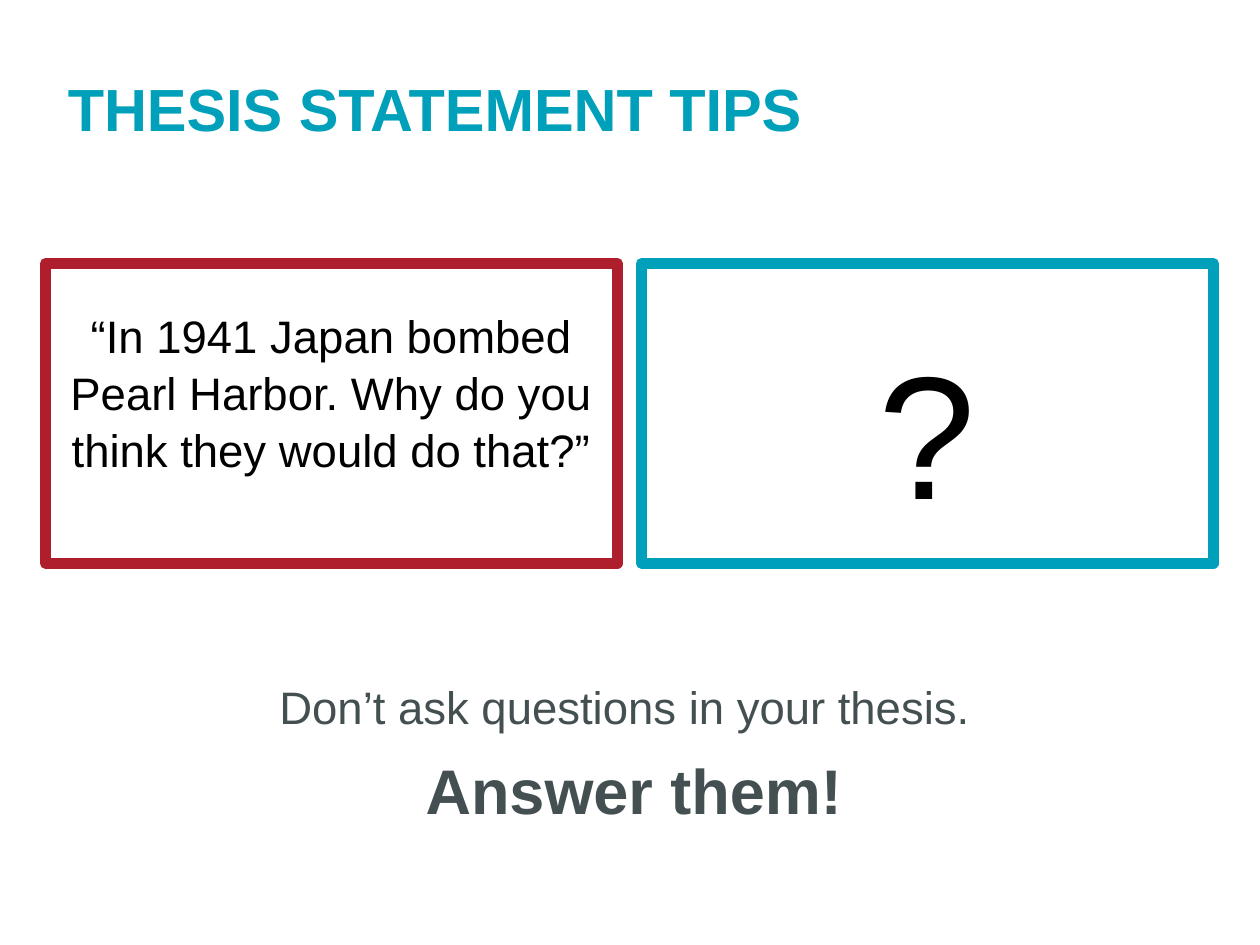
from lxml.etree import SubElement
from pptx import Presentation
from pptx.dml.color import RGBColor
from pptx.enum.shapes import MSO_SHAPE as Shape
from pptx.enum.text import MSO_ANCHOR as Anchor, PP_ALIGN as Align
from pptx.oxml.ns import qn
from pptx.util import Pt

TEAL = RGBColor(0x00, 0xA0, 0xBA)
RED = RGBColor(0xAF, 0x1E, 0x2D)
GRAY = RGBColor(0x44, 0x4F, 0x51)
BLACK = RGBColor(0x00, 0x00, 0x00)

BOX_LEFT, BOX_TOP, BOX_WIDTH, BOX_HEIGHT = 25.9, 150.5, 326.9, 171.4
BOX_STEP = 340.6


def set_attributes(target, values):
    for name, value in values.items():
        setattr(target, name, value)


def set_frame(shape, top_inset):
    frame = shape.text_frame
    set_attributes(frame, {
        "word_wrap": True, "vertical_anchor": Anchor.TOP,
        "margin_left": Pt(7.2), "margin_right": Pt(7.2),
        "margin_top": Pt(top_inset), "margin_bottom": Pt(3.6),
    })
    return frame


def add_run(paragraph, text, size, color, bold=False):
    run = paragraph.add_run()
    run.text = text
    set_attributes(run.font, {"name": "Arial", "size": Pt(size), "bold": bold})
    run.font.color.rgb = color


def add_text_box(slide, left, top, width, height, top_inset):
    shape = slide.shapes.add_textbox(Pt(left), Pt(top), Pt(width), Pt(height))
    return set_frame(shape, top_inset)


def add_framed_box(slide, column, color, text, size, top_inset):
    shape = slide.shapes.add_shape(
        Shape.RECTANGLE, Pt(BOX_LEFT + column * BOX_STEP), Pt(BOX_TOP),
        Pt(BOX_WIDTH), Pt(BOX_HEIGHT))
    shape.shadow.inherit = False
    shape.fill.background()
    shape.line.color.rgb = color
    shape.line.width = Pt(6)
    # Rounded corners on the outline
    SubElement(shape.line._get_or_add_ln(), qn("a:round"))
    paragraph = set_frame(shape, top_inset).paragraphs[0]
    set_attributes(paragraph, {"alignment": Align.CENTER, "line_spacing": 1.04})
    add_run(paragraph, text, size, BLACK)


def main():
    presentation = Presentation()
    set_attributes(presentation, {"slide_width": Pt(720), "slide_height": Pt(540)})
    slide = presentation.slides.add_slide(presentation.slide_layouts[6])

    # Title
    title = add_text_box(slide, 31.7, 31, 661, 53.3, 10)
    add_run(title.paragraphs[0], "THESIS STATEMENT TIPS", 34, TEAL, bold=True)

    # Example and question mark
    add_framed_box(slide, 0, RED, "“In 1941 Japan bombed Pearl Harbor. "
                   "Why do you think they would do that?”", 26, 24.3)
    add_framed_box(slide, 1, TEAL, "?", 100, 30)

    # Advice
    advice = add_text_box(slide, 42.5, 370.1, 639.4, 61.2, 6.4)
    question, answer = advice.paragraphs[0], advice.add_paragraph()
    for paragraph in (question, answer):
        set_attributes(paragraph, {"alignment": Align.CENTER, "line_spacing": 1.04})
    answer.space_before = Pt(6.4)
    add_run(question, "Don’t ask questions in your thesis.", 26, GRAY)
    add_run(question, " ", 36, GRAY)
    add_run(answer, "Answer them!", 36, GRAY, bold=True)

    presentation.save("out.pptx")


if __name__ == "__main__":
    main()
